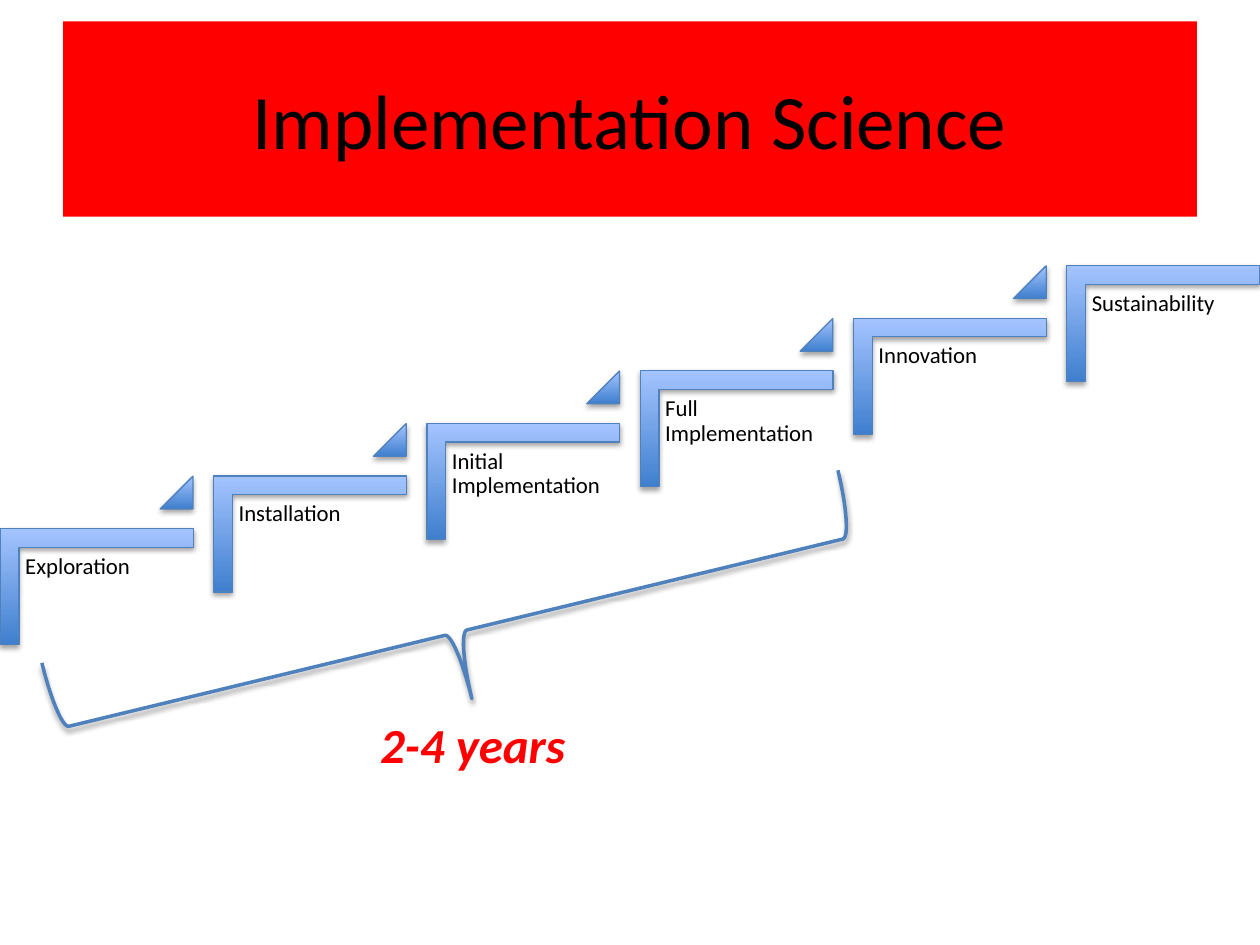
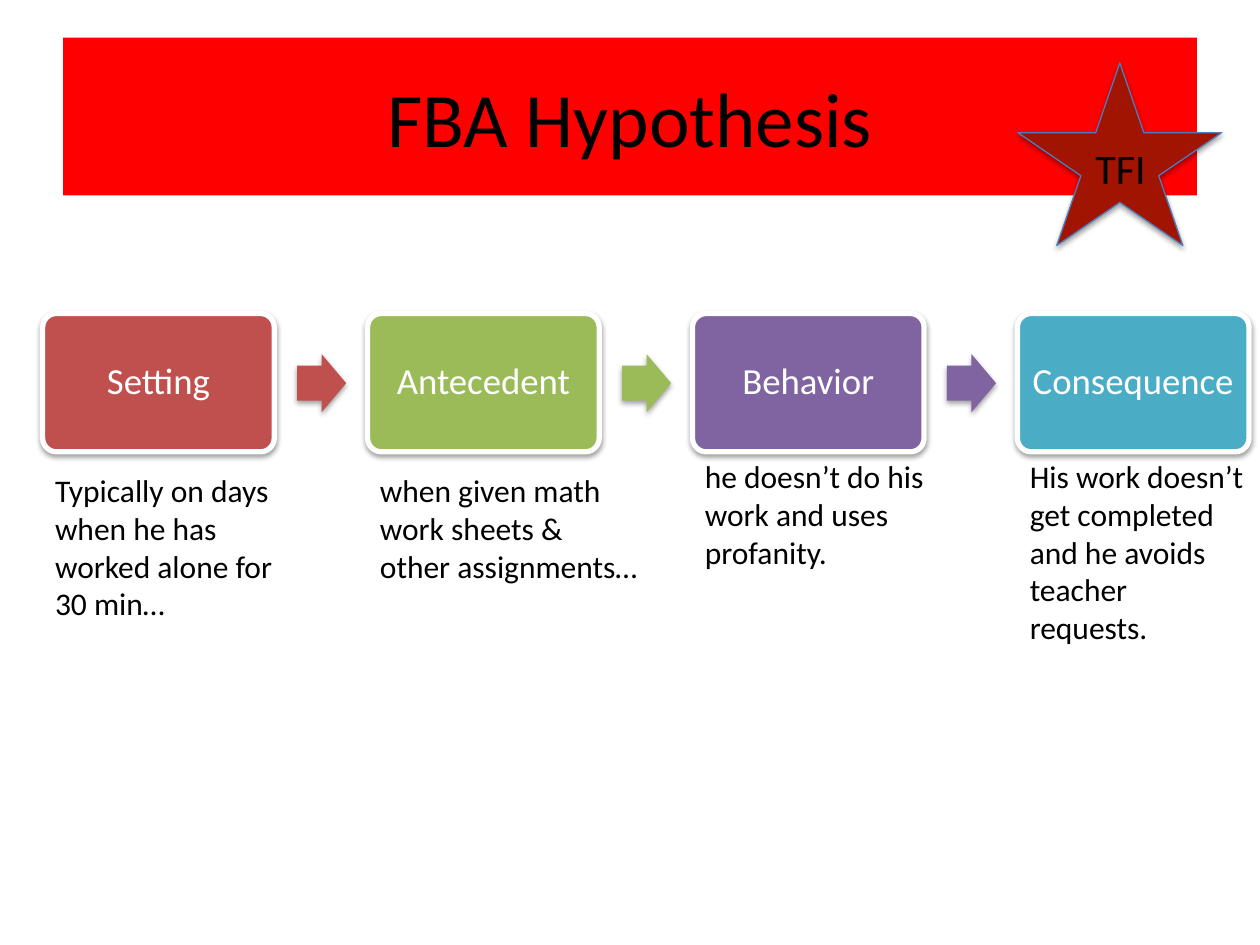
from lxml.etree import SubElement
from pptx import Presentation
from pptx.dml.color import RGBColor
from pptx.enum.shapes import MSO_SHAPE
from pptx.enum.text import MSO_ANCHOR, PP_ALIGN
from pptx.oxml.ns import qn
from pptx.util import Cm, Pt

FONT = "Calibri"
COLORS = {
    "black": "000000",
    "white": "FFFFFF",
    "band": "FF0000",
    "step_dark": "3F7FCE",
    "step_light": "A4C4FF",
    "outline": "4F81BD",
    "setting": "C0504D",
    "antecedent": "9BBB59",
    "behavior": "8064A2",
    "consequence": "4BACC6",
    "star": "A11402",
    "star_outline": "4B7EBC",
}
STEPS = ["Exploration", "Installation", "Initial Implementation",
         "Full Implementation", "Innovation", "Sustainability"]
STEP_RUN, STEP_RISE = 4.3, 1.06

# label, colour, description, then top, width and height of the description
STAGES = [
    ("Setting", "setting",
     "Typically on days when he has worked alone for 30 min…", 9.37, 5.28, 3.33),
    ("Antecedent", "antecedent",
     "when given math work sheets & other assignments…", 9.37, 5.72, 2.57),
    ("Behavior", "behavior",
     "he doesn’t do his work and uses profanity.", 9.09, 4.93, 2.57),
    ("Consequence", "consequence",
     "His work doesn’t get completed and he avoids teacher requests.", 9.09, 4.88, 4.11),
]
STAGE_PITCH = 6.55


def color(name):
    return RGBColor.from_string(COLORS[name])


class Deck:
    """Holds the shared style and the slide being filled; lengths are in cm."""

    def __init__(self):
        self.presentation = Presentation()
        self.presentation.slide_width = Cm(25.4)
        self.presentation.slide_height = Cm(19.05)
        self.slide = None

    def add_slide(self, title, top, height):
        layout = self.presentation.slide_layouts.get_by_name("Title Only")
        self.slide = self.presentation.slides.add_slide(layout)
        band = self.slide.shapes.title
        band.left, band.top, band.width, band.height = Cm(1.27), Cm(top), Cm(22.86), Cm(height)
        band.fill.solid()
        band.fill.fore_color.rgb = color("band")
        band.text_frame.vertical_anchor = MSO_ANCHOR.MIDDLE
        self.set_text(band, title, 44, align=PP_ALIGN.CENTER)

    def set_text(self, shape, text, size, color_name="black", align=PP_ALIGN.LEFT,
                 spacing=1.0, emphasis=False):
        frame = shape.text_frame
        frame.word_wrap = True
        frame.text = text
        paragraph = frame.paragraphs[0]
        paragraph.alignment = align
        paragraph.line_spacing = spacing
        font = paragraph.runs[0].font
        font.name, font.size = FONT, Pt(size)
        font.bold = font.italic = emphasis
        font.color.rgb = color(color_name)

    def text(self, text, size, left, top, width, height, margin=None, **style):
        box = self.slide.shapes.add_textbox(Cm(left), Cm(top), Cm(width), Cm(height))
        if margin is not None:
            self.set_margins(box, margin)
        self.set_text(box, text, size, **style)

    def set_margins(self, shape, margin):
        frame = shape.text_frame
        frame.margin_left = frame.margin_right = Cm(margin)
        frame.margin_top = frame.margin_bottom = Cm(margin)

    def shape(self, kind, left, top, width, height, fill=None, line=None,
              line_width=0.75, adjustments=(), rotation=0):
        shape = self.slide.shapes.add_shape(kind, Cm(left), Cm(top), Cm(width), Cm(height))
        shape.rotation = rotation
        for index, value in enumerate(adjustments):
            shape.adjustments[index] = value
        if fill:
            shape.fill.solid()
            shape.fill.fore_color.rgb = color(fill)
        else:
            shape.fill.background()
        if line:
            shape.line.color.rgb = color(line)
            shape.line.width = Pt(line_width)
        else:
            shape.line.fill.background()
        self.add_shadow(shape)
        return shape

    def add_shadow(self, shape):
        shape.shadow.inherit = False
        effects = shape._element.spPr.find(qn("a:effectLst"))
        shadow = SubElement(effects, qn("a:outerShdw"), blurRad=str(Pt(3.1)),
                            dist=str(Pt(1.7)), dir="5400000", rotWithShape="0")
        shadow_color = SubElement(shadow, qn("a:srgbClr"), val=COLORS["black"])
        SubElement(shadow_color, qn("a:alpha"), val="36000")

    def step_shape(self, kind, left, top, width, height, **options):
        """Add a shape shaded from dark at the bottom to light at the top."""
        shape = self.shape(kind, left, top, width, height, line="outline", **options)
        shape.fill.gradient()
        shape.fill.gradient_angle = 90
        for stop, name in zip(shape.fill.gradient_stops, ("step_dark", "step_light")):
            stop.color.rgb = color(name)
        shape._element.spPr.find(qn("a:gradFill")).set("rotWithShape", "0")


def build_implementation(deck):
    deck.add_slide("Implementation Science", 0.43, 3.94)
    for index, step in enumerate(STEPS):
        left, rise = index * STEP_RUN, index * STEP_RISE
        deck.step_shape(MSO_SHAPE.CORNER, left + 0.78, 9.88 - rise, 2.34, 3.89,
                        adjustments=(0.161, 0.161), rotation=90)
        deck.text(step, 13, left + 0.38, 11.05 - rise, 3.51, 3.07, margin=0.13, spacing=0.9)
        if index < len(STEPS) - 1:
            deck.step_shape(MSO_SHAPE.ISOSCELES_TRIANGLE, left + 3.23, 9.6 - rise,
                            0.66, 0.66, adjustments=(1,))
    deck.shape(MSO_SHAPE.RIGHT_BRACE, 7.82, 4.5, 2.74, 16.51, line="outline",
               line_width=2, adjustments=(0.083, 0.5), rotation=76.4)
    deck.text("2-4 years", 28, 6.99, 14.27, 5.08, 1.45, color_name="band",
              align=PP_ALIGN.CENTER, emphasis=True)


def build_hypothesis(deck):
    deck.add_slide("FBA Hypothesis", 0.76, 3.18)
    for index, (label, fill, description, top, width, height) in enumerate(STAGES):
        left = 0.86 + index * STAGE_PITCH
        box = deck.shape(MSO_SHAPE.ROUNDED_RECTANGLE, left, 6.32, 4.67, 2.79, fill=fill,
                         line="white", line_width=3, adjustments=(0.1,))
        box.text_frame.vertical_anchor = MSO_ANCHOR.MIDDLE
        deck.set_margins(box, 0.2)
        deck.set_text(box, label, 21, "white", PP_ALIGN.CENTER, spacing=0.9)
        if index < len(STAGES) - 1:
            deck.shape(MSO_SHAPE.RIGHT_ARROW, left + 5.13, 7.14, 0.99, 1.17, fill=fill,
                       adjustments=(0.6, 0.5))
        deck.text(description, 18, left, top, width, height)
    deck.shape(MSO_SHAPE.STAR_5_POINT, 20.52, 1.27, 4.11, 3.68, fill="star",
               line="star_outline")
    deck.text("TFI", 24, 21.69, 2.74, 1.8, 0.74, align=PP_ALIGN.CENTER)


def main():
    deck = Deck()
    build_implementation(deck)
    build_hypothesis(deck)
    deck.presentation.save("out.pptx")


if __name__ == "__main__":
    main()
